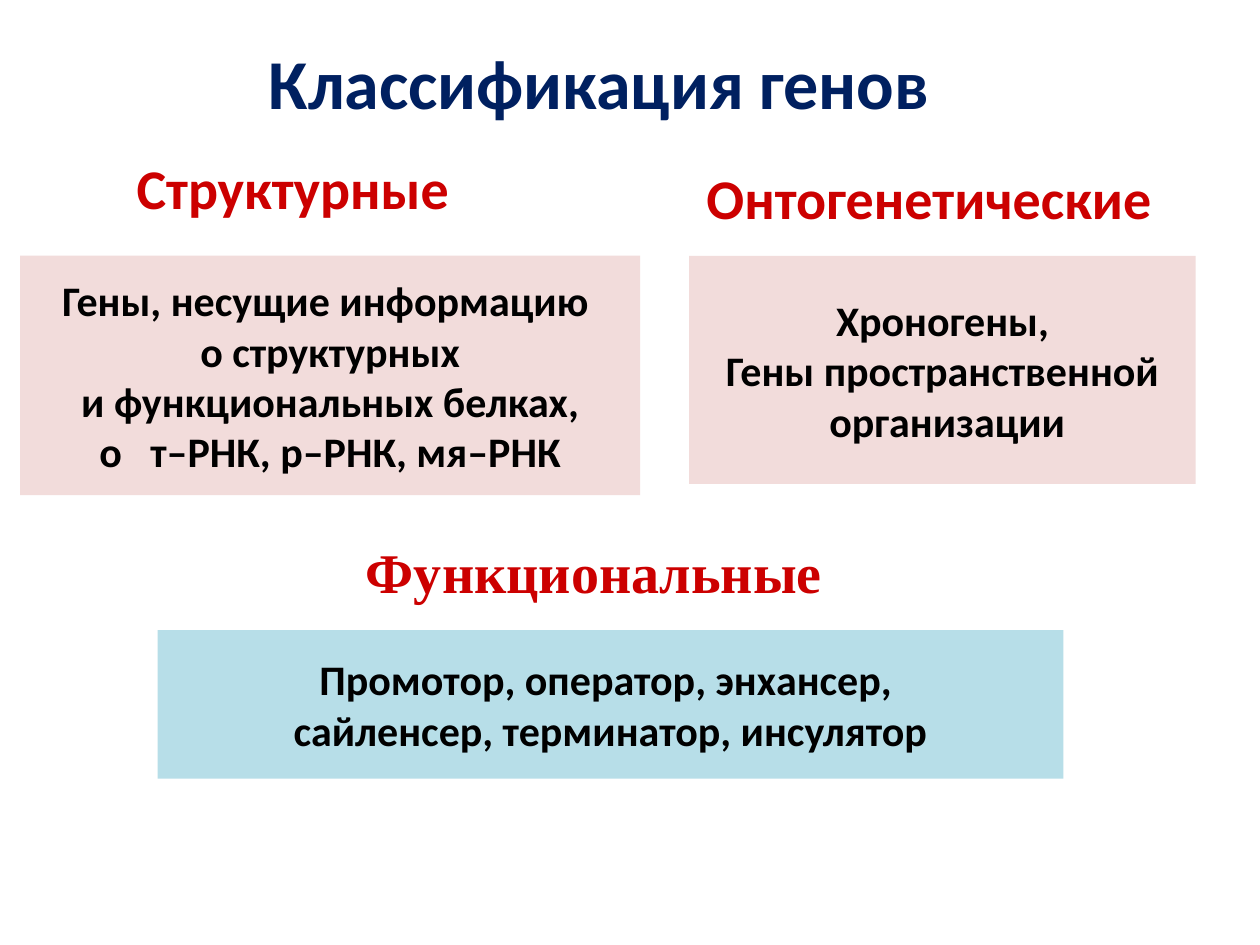
from pptx import Presentation
from pptx.dml.color import RGBColor
from pptx.enum.shapes import MSO_SHAPE as Shape
from pptx.enum.text import MSO_ANCHOR as Anchor, PP_ALIGN as Align
from pptx.util import Inches, Pt

COLUMNS, ROWS = 100, 75
NAVY, RED, BLACK = "002060", "CC0000", "000000"
PINK, BLUE = "F2DCDB", "B7DEE8"


def color(value):
    return RGBColor.from_string(value)


class GeneSlide:
    def __init__(self, deck, font="Calibri"):
        self.font = font
        self.column = deck.slide_width / COLUMNS
        self.row = deck.slide_height / ROWS
        self.slide = deck.slides.add_slide(deck.slide_layouts[6])

    def area(self, left, top, width, height):
        """Turn grid columns and rows into slide lengths."""
        return (round(left * self.column), round(top * self.row),
                round(width * self.column), round(height * self.row))

    def add_lines(self, box, lines, size, ink, font=None):
        """Fill a box with centred lines; each line is a list of (text, letter spacing in points)."""
        frame = box.text_frame
        for index, line in enumerate(lines):
            para = frame.paragraphs[0] if index == 0 else frame.add_paragraph()
            para.alignment = Align.CENTER
            for text, spacing in line:
                span = para.add_run()
                span.text = text
                span.font.name = font or self.font
                span.font.size = Pt(size)
                span.font.bold = True
                span.font.color.rgb = color(ink)
                if spacing:
                    span._r.get_or_add_rPr().set("spc", str(round(spacing * 100)))

    def heading(self, text, place, size=32, ink=RED, font=None, anchor=Anchor.TOP):
        box = self.slide.shapes.add_textbox(*self.area(*place))
        box.text_frame.word_wrap = True
        box.text_frame.vertical_anchor = anchor
        self.add_lines(box, [[(text, 0)]], size, ink, font)

    def panel(self, lines, place, fill):
        box = self.slide.shapes.add_shape(Shape.RECTANGLE, *self.area(*place))
        box.shadow.inherit = False
        box.fill.solid()
        box.fill.fore_color.rgb = color(fill)
        box.line.fill.background()
        box.text_frame.word_wrap = False
        box.text_frame.vertical_anchor = Anchor.MIDDLE
        self.add_lines(box, lines, 24, BLACK)


def main():
    deck = Presentation()
    deck.slide_width, deck.slide_height = Inches(10), Inches(7.5)
    genes = GeneSlide(deck)

    genes.heading("Классификация генов", (16.4, 3.1, 62.3, 6.7), 40, NAVY,
                  anchor=Anchor.MIDDLE)

    genes.heading("Структурные", (1.6, 11.7, 43.3, 6.4))
    genes.panel([
        [("Гены, несущие информацию ", 0)],
        [("о структурных", 0)],
        [(" и функциональных белках, ", 0)],
        [("о", 0), (" ", 10.8), ("т–РНК, р–РНК, мя–РНК", 0)],
    ], (1.6, 20.3, 49.2, 19), PINK)

    genes.heading("Онтогенетические", (51.6, 12.5, 44.3, 6.4))
    genes.panel([
        [("Хроногены,", 0)],
        [("Гены пространственной", 0)],
        [(" организации", 0)],
    ], (54.7, 20.3, 40.2, 18.1), PINK)

    genes.heading("Функциональные", (23.4, 42.2, 47.5, 6.4), font="Times New Roman")
    genes.panel([
        [("Промотор, оператор, энхансер, ", 0)],
        [("сайленсер, терминатор, инсулятор", 0)],
    ], (12.5, 50, 71.9, 11.8), BLUE)

    deck.save("out.pptx")


if __name__ == "__main__":
    main()
